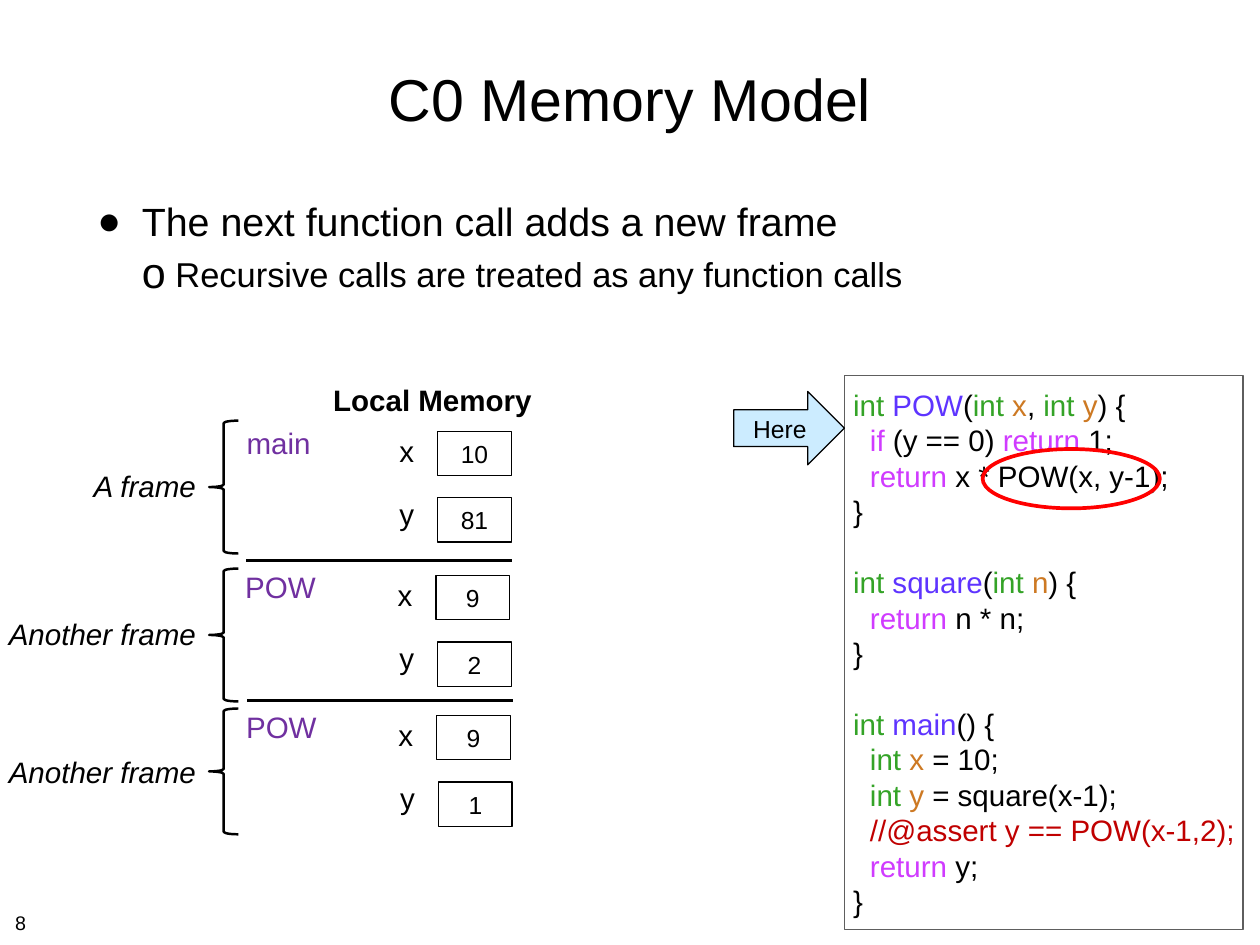
from dataclasses import dataclass

from lxml.etree import SubElement
from pptx import Presentation
from pptx.dml.color import RGBColor
from pptx.enum.shapes import MSO_CONNECTOR as Connector, MSO_SHAPE as Shape
from pptx.enum.text import MSO_ANCHOR as Anchor, MSO_AUTO_SIZE as AutoSize, PP_ALIGN as Align
from pptx.oxml.ns import qn
from pptx.util import Inches, Pt

BLACK = RGBColor(0x00, 0x00, 0x00)
GREY = RGBColor(0x5E, 0x5E, 0x5E)
RED = RGBColor(0xFF, 0x00, 0x00)
PURPLE = RGBColor(0x70, 0x30, 0xA0)
PALE_BLUE = RGBColor(0xCC, 0xEC, 0xFF)
TYPE = RGBColor(0x34, 0xA3, 0x27)
FUNCTION = RGBColor(0x5E, 0x34, 0xFF)
VARIABLE = RGBColor(0xCD, 0x79, 0x23)
KEYWORD = RGBColor(0xD0, 0x3B, 0xFF)
CONTRACT = RGBColor(0xC0, 0x00, 0x00)

FONT = "Arial"
CODE_LINE = Pt(28.8)
CODE_INDENT = Inches(0.19)

INT = ("int ", TYPE)
RETURN = ("return", KEYWORD)
CLOSE = [("}", BLACK)]

# Each function is a list of lines; all but the first and last are indented.
CODE = [
    [
        [INT, ("POW", FUNCTION), ("(", BLACK), INT, ("x", VARIABLE), (", ", BLACK),
         INT, ("y", VARIABLE), (") {", BLACK)],
        [("if ", KEYWORD), ("(y == 0) ", BLACK), RETURN, (" 1;", BLACK)],
        [RETURN, (" x * POW(x, y-1);", BLACK)],
        CLOSE,
    ],
    [
        [INT, ("square", FUNCTION), ("(", BLACK), INT, ("n", VARIABLE), (") {", BLACK)],
        [RETURN, (" n * n;", BLACK)],
        CLOSE,
    ],
    [
        [INT, ("main", FUNCTION), ("() {", BLACK)],
        [INT, ("x", VARIABLE), (" = 10;", BLACK)],
        [INT, ("y", VARIABLE), (" = square(x-1);", BLACK)],
        [("//@assert y == POW(x-1,2);", CONTRACT)],
        [RETURN, (" y;", BLACK)],
        CLOSE,
    ],
]


@dataclass
class Frame:
    function: str
    caption: str
    top: float
    brace_top: float
    brace_height: float
    caption_top: float
    variables: list  # (name, value, left edge of the value box)


FRAMES = [
    Frame("main", "A frame", 4.75, 4.75, 1.5, 5.24, [("x", "10", 4.94), ("y", "81", 4.94)]),
    Frame("POW", "Another frame", 6.38, 6.42, 1.5, 6.91, [("x", "9", 4.92), ("y", "2", 4.94)]),
    Frame("POW", "Another frame", 7.96, 8.0, 1.42, 8.46, [("x", "9", 4.93), ("y", "1", 4.95)]),
]


def style(span, size, color=BLACK, bold=False, italic=False):
    font = span.font
    font.name, font.size, font.bold, font.italic = FONT, Pt(size), bold, italic
    font.color.rgb = color


def set_insets(frame, side, top):
    frame.margin_left = frame.margin_right = Inches(side)
    frame.margin_top = frame.margin_bottom = Inches(top)


def place(shape, left, top, width, height):
    shape.left, shape.top = Inches(left), Inches(top)
    shape.width, shape.height = Inches(width), Inches(height)


def add_label(page, text, left, top, width, height, size=24, align=Align.CENTER,
              insets=(0.06, 0.06), **look):
    box = page.shapes.add_textbox(Inches(left), Inches(top), Inches(width), Inches(height))
    frame = box.text_frame
    frame.word_wrap = False
    set_insets(frame, *insets)
    frame.text = text
    para = frame.paragraphs[0]
    para.alignment = align
    style(para.runs[0], size, **look)


def add_outline(page, kind, left, top, width, height, line=BLACK, weight=1, fill=None, text=""):
    shape = page.shapes.add_shape(kind, Inches(left), Inches(top), Inches(width), Inches(height))
    shape.shadow.inherit = False
    if fill is None:
        shape.fill.background()
    else:
        shape.fill.solid()
        shape.fill.fore_color.rgb = fill
    shape.line.color.rgb = line
    shape.line.width = Pt(weight)
    if text:
        frame = shape.text_frame
        set_insets(frame, 0.05, 0.05)
        frame.vertical_anchor = Anchor.MIDDLE
        frame.text = text
        frame.paragraphs[0].alignment = Align.CENTER
        style(frame.paragraphs[0].runs[0], 20)
    return shape


def add_divider(page, left, top, width):
    line = page.shapes.add_connector(Connector.STRAIGHT, Inches(left), Inches(top),
                                     Inches(left + width), Inches(top))
    line.line.color.rgb = BLACK
    line.line.width = Pt(2)
    SubElement(line._element.spPr, qn("a:effectLst"))


def set_indent(para, margin, first=0):
    properties = para._p.get_or_add_pPr()
    properties.set("marL", str(int(margin)))
    properties.set("indent", str(int(first)))
    return properties


def set_bullet(para, char, margin, hanging, percent):
    properties = set_indent(para, Inches(margin), -Inches(hanging))
    SubElement(properties, qn("a:buSzPct")).set("val", str(percent * 1000))
    SubElement(properties, qn("a:buFont")).set("typeface", FONT)
    SubElement(properties, qn("a:buChar")).set("char", char)


def fill_title(page):
    title = page.shapes.title
    place(title, 1.04, 0.28, 12.14, 1.64)
    frame = title.text_frame
    frame.text = "C0 Memory Model"
    frame.auto_size = AutoSize.NONE
    frame.vertical_anchor = Anchor.MIDDLE
    set_insets(frame, 0.06, 0.06)
    frame.paragraphs[0].alignment = Align.CENTER
    style(frame.paragraphs[0].runs[0], 48)


def fill_body(page):
    body = page.placeholders[1]
    place(body, 1.04, 2.17, 12.14, 1.83)
    frame = body.text_frame
    frame.auto_size = AutoSize.NONE
    set_insets(frame, 0.06, 0.06)
    frame.text = ("The next function call adds a new frame\n"
                  "Recursive calls are treated as any function calls")
    levels = [(32, 8, ("●", 0.5, 0.5, 100)), (28, 7, ("o", 0.88, 0.38, 125))]
    for level, (para, (size, before, bullet)) in enumerate(zip(frame.paragraphs, levels)):
        para.level = level
        para.space_before = Pt(before)
        set_bullet(para, *bullet)
        style(para.runs[0], size)


def add_code(page):
    panel = add_outline(page, Shape.RECTANGLE, 9.53, 4.24, 4.5, 6.26, line=GREY)
    frame = panel.text_frame
    set_insets(frame, 0.1, 0.1)
    frame.margin_right = 0
    frame.vertical_anchor = Anchor.MIDDLE
    para = frame.paragraphs[0]
    for function in CODE:
        for number, line in enumerate(function):
            if para is None:
                para = frame.add_paragraph()
            para.alignment = Align.LEFT
            para.line_spacing = CODE_LINE
            if number == 0 and function is not CODE[0]:
                para.space_before = CODE_LINE
            if 0 < number < len(function) - 1:
                set_indent(para, CODE_INDENT)
            for text, color in line:
                span = para.add_run()
                span.text = text
                style(span, 24, color)
            para = None


def add_frame(page, frame):
    name_left = frame.variables[0][2] - 2.26
    name_width = 0.93 if frame.function == "main" else 1.01
    add_label(page, frame.function, name_left, frame.top, name_width, 0.51,
              insets=(0.1, 0.05), color=PURPLE)
    for row, (name, value, left) in enumerate(frame.variables):
        add_label(page, name, left - 0.5, frame.top + 0.08 + 0.71 * row, 0.3, 0.52)
        add_outline(page, Shape.RECTANGLE, left, frame.top + 0.12 + 0.75 * row, 0.83, 0.5,
                    text=value)
    brace = add_outline(page, Shape.LEFT_BRACE, 2.36, frame.brace_top, 0.33,
                        frame.brace_height, weight=2)
    brace.adjustments[0] = 0.083
    add_label(page, frame.caption, -0.03, frame.caption_top, 2.34, 0.5,
              align=Align.RIGHT, insets=(0.1, 0.05), italic=True)


def main():
    deck = Presentation()
    deck.slide_width, deck.slide_height = Inches(14.22), Inches(10.67)
    page = deck.slides.add_slide(deck.slide_layouts[1])
    fill_title(page)
    fill_body(page)
    add_label(page, "Local Memory", 3.69, 4.25, 2.38, 0.52, bold=True)
    add_code(page)
    add_outline(page, Shape.RIGHT_ARROW, 8.28, 4.42, 1.25, 0.83, fill=PALE_BLUE, text="Here")
    for frame in FRAMES:
        add_frame(page, frame)
    add_divider(page, 2.78, 6.33, 3)
    add_divider(page, 2.79, 7.91, 3)
    add_label(page, "8", 0.11, 10.23, 0.37, 0.35, size=16, align=Align.LEFT)
    add_outline(page, Shape.OVAL, 11.09, 5.07, 2, 0.67, line=RED, weight=3)
    deck.save("out.pptx")


if __name__ == "__main__":
    main()
